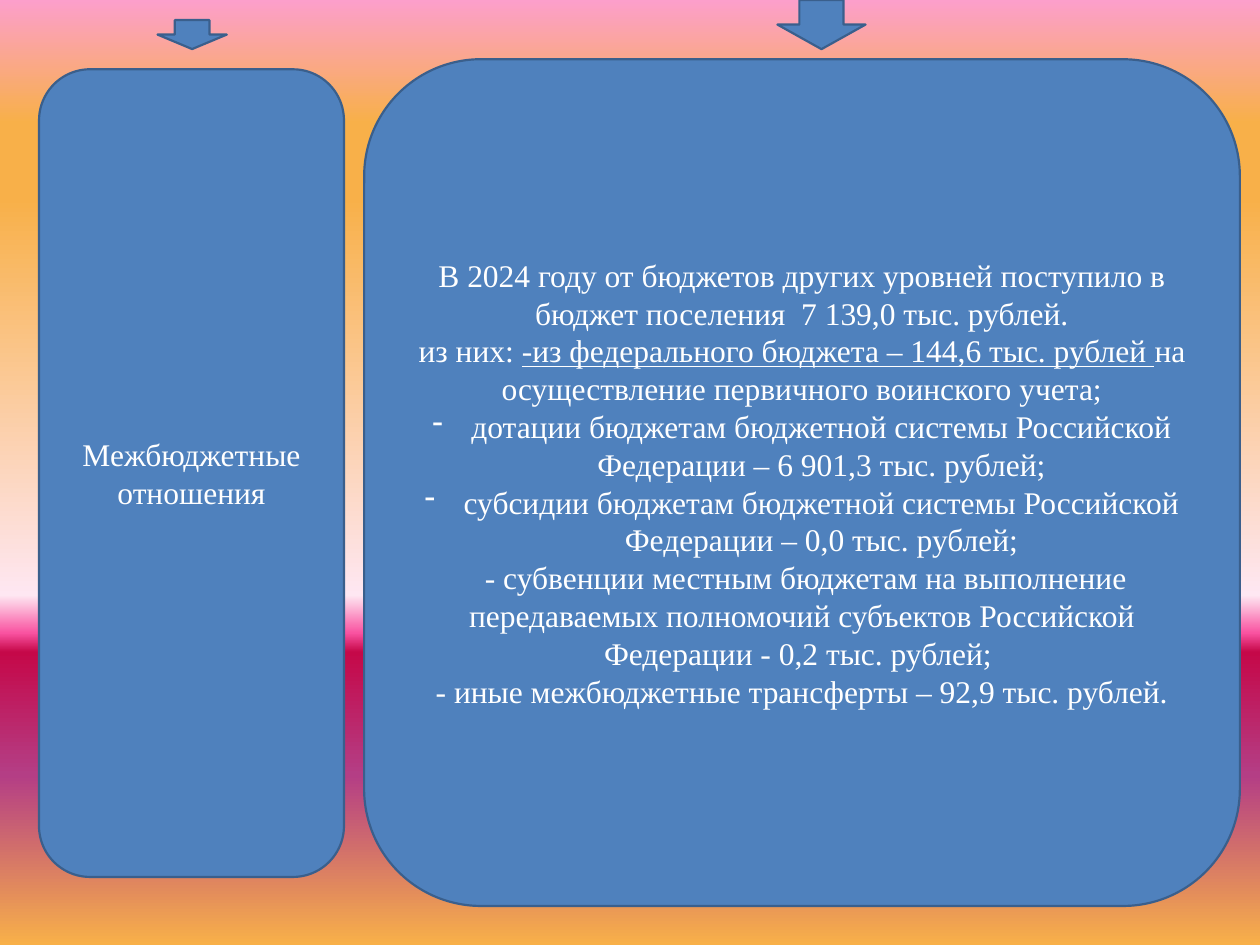
from dataclasses import dataclass

from lxml.etree import SubElement
from pptx import Presentation
from pptx.dml.color import RGBColor
from pptx.enum.shapes import MSO_SHAPE as Shape
from pptx.enum.text import MSO_ANCHOR as Anchor, PP_ALIGN as Align
from pptx.oxml.ns import qn
from pptx.util import Inches, Pt


@dataclass(frozen=True)
class Theme:
    fill: str = "4F81BD"
    outline: str = "3A5F8C"
    outline_width: float = 1.25
    text: str = "FFFFFF"
    font: str = "Times New Roman"
    size: int = 18
    bullet_indent: float = 0.31
    # Background stops: position in percent, colour
    backdrop: tuple = (
        (0, "FC9FCB"), (13, "F8B049"), (21, "F8B049"), (63, "FEE7F2"),
        (67, "F952A0"), (69, "C50849"), (82, "B43E85"), (100, "F8B049"),
    )


THEME = Theme()

# Content: each paragraph is (bulleted, [(text, underlined), ...])
TOPIC = [(False, [("Межбюджетные отношения", False)])]
TRANSFERS = [
    (False, [("В 2024 году от бюджетов других уровней поступило в бюджет "
              "поселения  7 139,0 тыс. рублей.", False)]),
    (False, [("из них: ", False),
             ("-из федерального бюджета – 144,6 тыс. рублей ", True),
             ("на осуществление первичного воинского учета;", False)]),
    (True, [("дотации бюджетам бюджетной системы Российской Федерации – "
             "6 901,3 тыс. рублей;", False)]),
    (True, [("субсидии бюджетам бюджетной системы Российской Федерации – "
             "0,0 тыс. рублей;", False)]),
    (False, [(" - субвенции местным бюджетам на выполнение передаваемых "
              "полномочий субъектов Российской Федерации - "
              "0,2 тыс. рублей; ", False)]),
    (False, [("- иные межбюджетные трансферты – 92,9 тыс. рублей.", False)]),
]

# Layout in inches: (left, top, width, height), corner radius share, content
PANELS = [
    ((0.31, 0.55, 2.42, 6.41), 0.167, TOPIC),
    ((2.89, 0.47, 6.95, 6.72), 0.138, TRANSFERS),
]
ARROWS = [(1.25, 0.16, 0.55, 0.23), (6.17, 0, 0.7, 0.39)]


def paint_background(slide):
    fill = slide.background.fill
    fill.gradient()
    fill.gradient_angle = 270
    stops = slide.element.find(".//" + qn("a:gsLst"))
    stops.clear()
    for percent, colour in THEME.backdrop:
        stop = SubElement(stops, qn("a:gs"), pos=str(percent * 1000))
        SubElement(stop, qn("a:srgbClr"), val=colour)


def add_block(slide, kind, box):
    block = slide.shapes.add_shape(kind, *map(Inches, box))
    block.shadow.inherit = False
    block.fill.solid()
    block.fill.fore_color.rgb = RGBColor.from_string(THEME.fill)
    block.line.color.rgb = RGBColor.from_string(THEME.outline)
    block.line.width = Pt(THEME.outline_width)
    return block


def add_dash(paragraph):
    indent = Inches(THEME.bullet_indent)
    properties = paragraph._p.get_or_add_pPr()
    properties.set("marL", str(indent))
    properties.set("indent", str(-indent))
    SubElement(properties, qn("a:buChar"), char="-")


def write_paragraphs(frame, paragraphs):
    frame.word_wrap = True
    frame.vertical_anchor = Anchor.MIDDLE
    for index, (bulleted, pieces) in enumerate(paragraphs):
        paragraph = frame.add_paragraph() if index else frame.paragraphs[0]
        paragraph.alignment = Align.CENTER
        if bulleted:
            add_dash(paragraph)
        for text, underlined in pieces:
            run = paragraph.add_run()
            run.text = text
            run.font.name = THEME.font
            run.font.size = Pt(THEME.size)
            run.font.color.rgb = RGBColor.from_string(THEME.text)
            run.font.underline = underlined


def main():
    deck = Presentation()
    deck.slide_width, deck.slide_height = Inches(10), Inches(7.5)
    slide = deck.slides.add_slide(deck.slide_layouts[6])
    paint_background(slide)

    # Text panels
    for box, corner, paragraphs in PANELS:
        panel = add_block(slide, Shape.ROUNDED_RECTANGLE, box)
        panel.adjustments[0] = corner
        write_paragraphs(panel.text_frame, paragraphs)

    # Arrows pointing to the panels
    for box in ARROWS:
        add_block(slide, Shape.DOWN_ARROW, box)

    deck.save("out.pptx")


if __name__ == "__main__":
    main()
